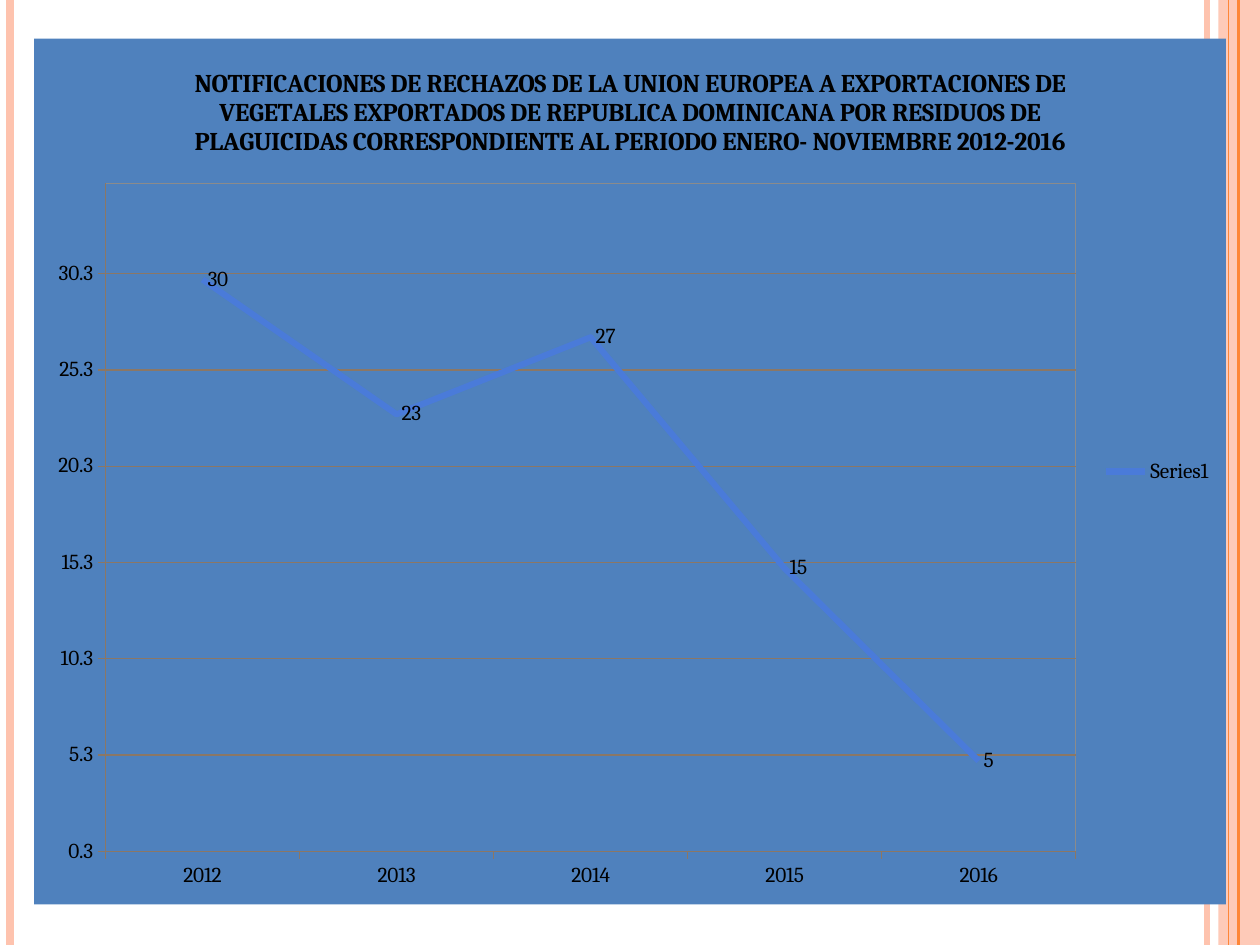
"""Build a slide with a line chart of export rejections by year."""
import pptx
import pptx.chart.data
import pptx.dml.color
import pptx.enum.chart
import pptx.enum.shapes
import pptx.oxml
import pptx.oxml.ns
import pptx.util

TITLE = ("NOTIFICACIONES DE RECHAZOS DE LA UNION EUROPEA A EXPORTACIONES DE "
         "VEGETALES EXPORTADOS DE REPUBLICA DOMINICANA POR RESIDUOS DE "
         "PLAGUICIDAS CORRESPONDIENTE AL PERIODO ENERO- NOVIEMBRE 2012-2016")
DATA = {"2012": 30, "2013": 23, "2014": 27, "2015": 15, "2016": 5}
HUES = {"peach": "FEC3AE", "orange": "FE8637", "blue": "4F81BD",
        "trend": "4A7BD9", "grid": "8B7765", "edge": "8B8B8B", "ink": "000000"}
RULES = [(0.958, "peach", 3), (0.008, "peach", 4.5),
         (0.983, "orange", 1.5), (0.975, "orange", 0.75)]
BAND = (0.967, 0, 0.033, 1)
FRAME = (0.027, 0.041, 0.946, 0.916)
PLOT = {"x": 0.06, "y": 0.167, "w": 0.814, "h": 0.772}
WIDE, HIGH = pptx.util.Inches(10), pptx.util.Inches(7.5)
NS = pptx.oxml.ns.nsdecls("c", "a")
qn = pptx.oxml.ns.qn


def hue(name):
    return pptx.dml.color.RGBColor.from_string(HUES[name])


def area(box):
    return [int(part * side) for part, side in zip(box, (WIDE, HIGH) * 2)]


def stroke(line, name, width):
    line.color.rgb = hue(name)
    line.width = pptx.util.Pt(width)


def style(font, size, bold=False):
    font.name, font.size, font.bold = "Cambria", pptx.util.Pt(size), bold
    font.color.rgb = hue("ink")


def fill(edge):
    line = f'<a:solidFill><a:srgbClr val="{HUES[edge]}"/></a:solidFill>' if edge else "<a:noFill/>"
    return pptx.oxml.parse_xml(
        f'<c:spPr {NS}><a:solidFill><a:srgbClr val="{HUES["blue"]}"/></a:solidFill>'
        f'<a:ln w="9525">{line}</a:ln></c:spPr>')


def place(plot):
    for old in plot.findall(qn("c:layout")):
        plot.remove(old)
    parts = "".join(f'<c:{key} val="{val}"/>' for key, val in PLOT.items())
    plot.insert(0, pptx.oxml.parse_xml(
        f'<c:layout {NS}><c:manualLayout><c:layoutTarget val="inner"/>'
        f'<c:xMode val="edge"/><c:yMode val="edge"/>{parts}</c:manualLayout></c:layout>'))


def trim(shapes):
    for left, name, width in RULES:
        x = int(left * WIDE)
        rule = shapes.add_connector(pptx.enum.shapes.MSO_CONNECTOR.STRAIGHT, x, 0, x, HIGH)
        stroke(rule.line, name, width)
        rule.element.spPr.append(pptx.oxml.parse_xml(f"<a:effectLst {NS}/>"))
        if left == BAND[0] - 0.009:
            continue
    band = shapes.add_shape(pptx.enum.shapes.MSO_SHAPE.RECTANGLE, *area(BAND))
    band.shadow.inherit = False
    band.fill.solid()
    band.fill.fore_color.rgb = hue("peach")
    band.line.fill.background()
    tint = band.element.spPr.find(".//" + qn("a:srgbClr"))
    tint.append(pptx.oxml.parse_xml(f'<a:alpha {NS} val="87000"/>'))
    shapes._spTree.insert(4, band.element)


def graph(shapes):
    data = pptx.chart.data.CategoryChartData()
    data.categories = list(DATA)
    data.add_series("Series1", list(DATA.values()))
    kind = pptx.enum.chart.XL_CHART_TYPE.LINE
    chart = shapes.add_chart(kind, *area(FRAME), data).chart
    style(chart.font, 12.2)
    chart.has_title = True
    text = chart.chart_title.text_frame
    text.text = TITLE
    style(text.paragraphs[0].font, 14.6, True)
    chart.has_legend = True
    chart.legend.position = pptx.enum.chart.XL_LEGEND_POSITION.RIGHT
    chart.legend.include_in_layout = False

    years, count = chart.category_axis, chart.value_axis
    count.minimum_scale, count.maximum_scale, count.major_unit = 0.3, 35, 5
    count.has_major_gridlines = True
    count.tick_labels.number_format = "General"
    count.tick_labels.number_format_is_linked = False
    for line in (years.format.line, count.format.line, count.major_gridlines.format.line):
        stroke(line, "grid", 0.75)
    for axis in (years, count):
        axis.major_tick_mark = pptx.enum.chart.XL_TICK_MARK.OUTSIDE

    plot = chart.plots[0]
    plot.vary_by_categories = False
    trend = plot.series[0]
    trend.smooth = False
    trend.marker.style = pptx.enum.chart.XL_MARKER_STYLE.NONE
    stroke(trend.format.line, "trend", 3.5)
    trend.data_labels.show_value = True
    trend.data_labels.position = pptx.enum.chart.XL_LABEL_POSITION.RIGHT

    body = chart.element.find(qn("c:chart"))
    body.addnext(fill(None))
    zone = body.find(qn("c:plotArea"))
    place(zone)
    zone.append(fill("edge"))


def main():
    deck = pptx.Presentation()
    deck.slide_width, deck.slide_height = WIDE, HIGH
    slide = deck.slides.add_slide(deck.slide_layouts[6])
    trim(slide.shapes)
    graph(slide.shapes)
    deck.save("out.pptx")


if __name__ == "__main__":
    main()
